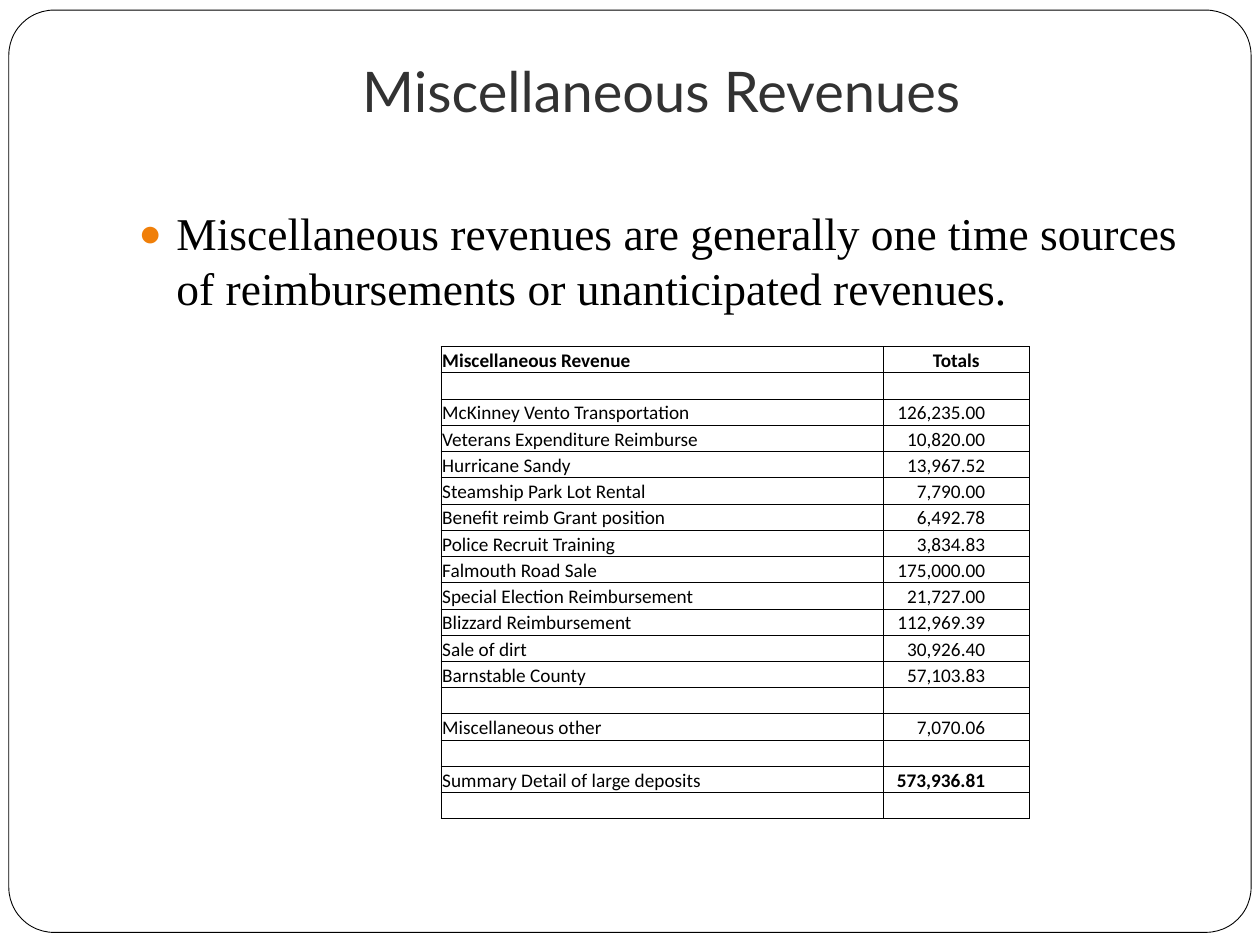
from dataclasses import dataclass

from lxml import etree
from pptx import Presentation
from pptx import util as u
from pptx.dml.color import RGBColor
from pptx.enum import shapes, text
from pptx.oxml import ns


@dataclass(frozen=True)
class Theme:
    ink: str = "000000"
    head: str = "323232"
    paper: str = "FFFFFF"
    accent: str = "F07F09"
    title: tuple = ("Lato", 32)
    body: tuple = ("Times New Roman", 26)
    cell: tuple = ("Calibri", 11)
    rule: float = 0.5


ROWS = [
    ("Miscellaneous Revenue", "Totals"),
    ("", ""),
    ("McKinney Vento Transportation", "126,235.00"),
    ("Veterans Expenditure Reimburse", "10,820.00"),
    ("Hurricane Sandy", "13,967.52"),
    ("Steamship Park Lot Rental", "7,790.00"),
    ("Benefit reimb Grant position", "6,492.78"),
    ("Police Recruit Training", "3,834.83"),
    ("Falmouth Road Sale", "175,000.00"),
    ("Special Election Reimbursement", "21,727.00"),
    ("Blizzard Reimbursement", "112,969.39"),
    ("Sale of dirt", "30,926.40"),
    ("Barnstable County", "57,103.83"),
    ("", ""),
    ("Miscellaneous other", "7,070.06"),
    ("", ""),
    ("Summary Detail of large deposits", "573,936.81"),
    ("", ""),
]
BOLD = {(0, 0), (0, 1), (16, 1)}


def add(parent, tag, **attrs):
    return etree.SubElement(parent, ns.qn(tag), attrs)


class Deck:
    def __init__(self, theme, slide):
        self.theme, self.slide = theme, slide

    def place(self, shape, box):
        shape.left, shape.top, shape.width, shape.height = map(u.Inches, box)

    def style(self, para, face, color, bold=False):
        font = para.font
        font.name, font.size = face[0], u.Pt(face[1])
        font.bold = bold
        font.color.rgb = RGBColor.from_string(color)

    def frame(self, box, round_by):
        """Put a rounded border behind everything else."""
        shape = self.slide.shapes.add_shape(
            shapes.MSO_SHAPE.ROUNDED_RECTANGLE, *map(u.Inches, box))
        shape.adjustments[0] = round_by
        shape.shadow.inherit = False
        shape.fill.solid()
        shape.fill.fore_color.rgb = RGBColor.from_string(self.theme.paper)
        shape.line.color.rgb = RGBColor.from_string(self.theme.ink)
        shape.line.width = u.Pt(self.theme.rule)
        self.slide.shapes._spTree.insert(2, shape._element)

    def title(self, words, box):
        shape = self.slide.shapes.title
        self.place(shape, box)
        frame = shape.text_frame
        frame.text = words
        frame.auto_size = text.MSO_AUTO_SIZE.NONE
        frame.vertical_anchor = text.MSO_ANCHOR.BOTTOM
        frame.margin_bottom = u.Inches(0.1)
        para = frame.paragraphs[0]
        para.alignment = text.PP_ALIGN.CENTER
        self.style(para, self.theme.title, self.theme.head)

    def bullet(self, words, box):
        shape = self.slide.placeholders[1]
        self.place(shape, box)
        frame = shape.text_frame
        frame.text = words
        frame.auto_size = text.MSO_AUTO_SIZE.NONE
        para = frame.paragraphs[0]
        para.space_before = u.Pt(5.8)
        props = para._p.get_or_add_pPr()
        props.set("marL", str(u.Inches(0.3)))
        props.set("indent", str(-u.Inches(0.3)))
        add(add(props, "a:buClr"), "a:srgbClr", val=self.theme.accent)
        add(props, "a:buSzPct", val="85000")
        add(props, "a:buChar", char="●")
        self.style(para, self.theme.body, self.theme.ink)

    def border(self, cell):
        props = cell._tc.get_or_add_tcPr()
        for spot, side in enumerate(("a:lnL", "a:lnR", "a:lnT", "a:lnB")):
            line = add(props, side, w=str(u.Pt(self.theme.rule)))
            add(add(line, "a:solidFill"), "a:srgbClr", val=self.theme.ink)
            props.insert(spot, line)

    def cell(self, cell, words, align, bold, right):
        cell.text = words
        cell.fill.background()
        cell.vertical_anchor = text.MSO_ANCHOR.BOTTOM
        cell.margin_left = cell.margin_top = u.Inches(0.01)
        cell.margin_right, cell.margin_bottom = u.Inches(right), 0
        para = cell.text_frame.paragraphs[0]
        para.alignment = align
        self.style(para, self.theme.cell, self.theme.ink, bold)
        if not words:  # an empty line takes its height from the end mark
            add(para._p, "a:endParaRPr", sz=str(self.theme.cell[1] * 100))
        self.border(cell)

    def table(self, rows, bold, box, widths):
        """Labels sit left; amounts share a right edge under a centred head."""
        grid = self.slide.shapes.add_table(
            len(rows), len(widths), *map(u.Inches, box)).table
        grid.first_row = grid.horz_banding = False
        for col, width in zip(grid.columns, widths):
            col.width = u.Inches(width)
        for r, row in enumerate(rows):
            grid.rows[r].height = u.Inches(box[3] / len(rows))
            for c, words in enumerate(row):
                align, right = text.PP_ALIGN.LEFT, 0.01
                if c and r:
                    align, right = text.PP_ALIGN.RIGHT, 0.35
                elif c:
                    align = text.PP_ALIGN.CENTER
                self.cell(grid.cell(r, c), words, align, (r, c) in bold, right)


def main():
    show = Presentation()
    show.slide_width, show.slide_height = u.Inches(10), u.Inches(7.5)
    deck = Deck(Theme(), show.slides.add_slide(show.slide_layouts[1]))
    deck.frame((0.07, 0.08, 9.86, 7.32), 0.049)
    deck.title("Miscellaneous Revenues", (1, 0.3, 8.5, 0.78))
    deck.bullet("Miscellaneous revenues are generally one time sources "
                "of reimbursements or unanticipated revenues.",
                (1, 1.58, 8.5, 5))
    deck.table(ROWS, BOLD, (3.5, 2.75, 4.67, 3.75), (3.51, 1.16))
    show.save("out.pptx")


if __name__ == "__main__":
    main()
